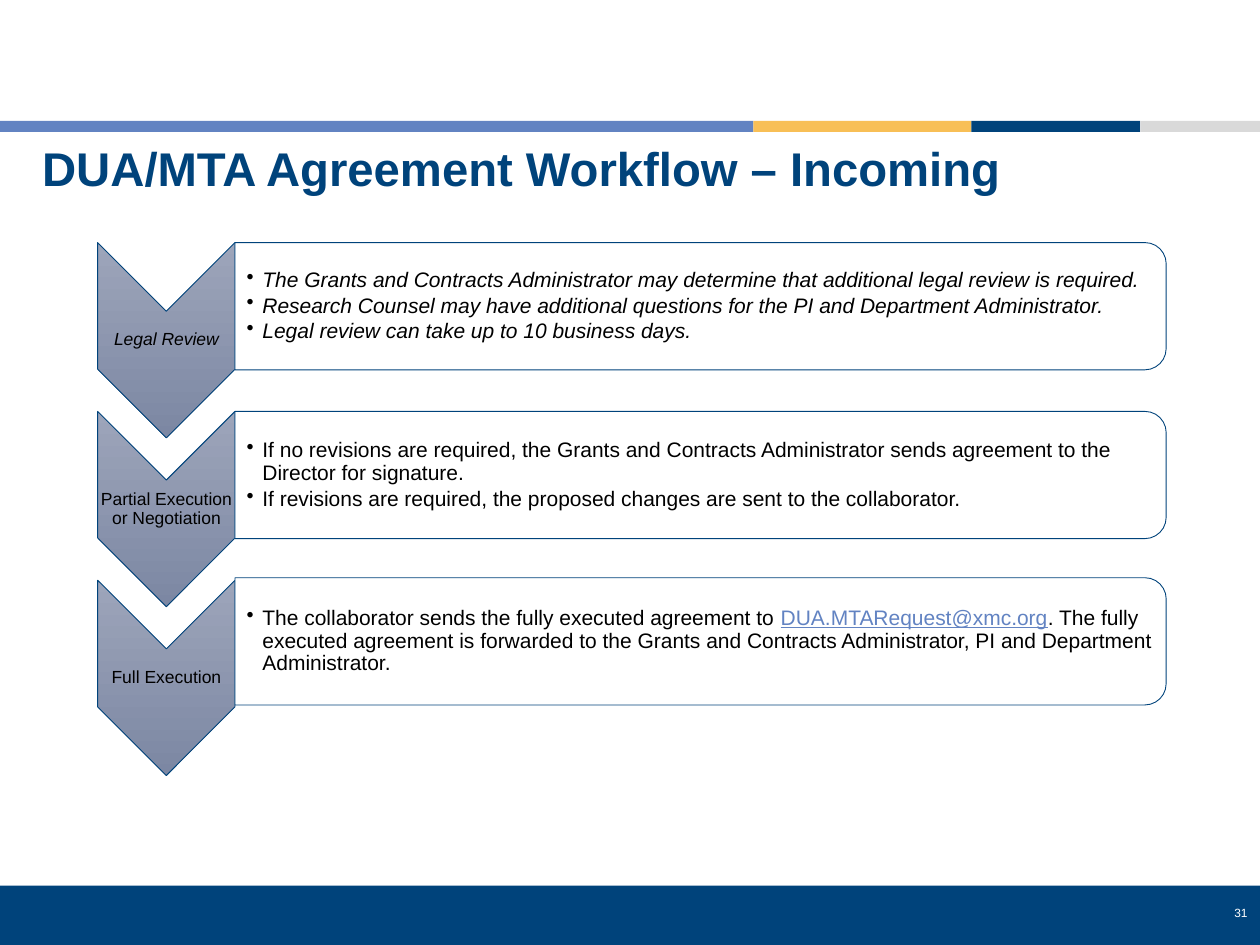
from lxml.etree import SubElement
from pptx import Presentation
from pptx.dml.color import RGBColor
from pptx.enum.shapes import MSO_SHAPE as Preset
from pptx.enum.text import MSO_ANCHOR as Anchor, PP_ALIGN as Align
from pptx.oxml.ns import qn
from pptx.util import Inches, Pt

CELL = 0.1
COLUMNS, ROWS = 100, 75
FONT = "Arial"
COLORS = {
    "navy": "00437B", "blue": "6283C2", "gold": "F8BF56", "grey": "D9D9D9",
    "white": "FFFFFF", "black": "000000", "steel_light": "9DA5BA", "steel_dark": "7C87A3",
}
BANDS = [("blue", 0, 59.8), ("gold", 59.8, 77.1), ("navy", 77.1, 90.5), ("grey", 90.5, COLUMNS)]
STEP_PITCH = 13.4
STEPS = [
    {"label": "Legal Review", "italic": True, "lift": 0, "points": [
        ["The Grants and Contracts Administrator may determine that additional legal review is required."],
        ["Research Counsel may have additional questions for the PI and Department Administrator."],
        ["Legal review can take up to 10 business days."]]},
    {"label": "Partial Execution or Negotiation", "italic": False, "lift": 0, "points": [
        ["If no revisions are required, the Grants and Contracts Administrator sends agreement to the "
         "Director for signature."],
        ["If revisions are required, the proposed changes are sent to the collaborator."]]},
    {"label": "Full Execution", "italic": False, "lift": 0.2, "points": [
        ["The collaborator sends the fully executed agreement to ",
         "DUA.MTARequest@xmc.org",
         ". The fully executed agreement is forwarded to the Grants and Contracts Administrator, "
         "PI and Department Administrator."]]},
]


def color(name):
    """Return the named palette colour."""
    return RGBColor.from_string(COLORS[name])


def grid(cells):
    """Convert grid cells to a slide length."""
    return Inches(cells * CELL)


def add_block(slide, preset, box, fill=None, line=None, turned=False):
    """Add a shape that covers the box, turned a quarter clockwise if asked."""
    left, top, width, height = box
    if turned:
        left, top = left + (width - height) / 2, top + (height - width) / 2
        width, height = height, width
    shape = slide.shapes.add_shape(preset, *map(grid, (left, top, width, height)))
    shape.shadow.inherit = False
    shape.rotation = 90 if turned else 0
    if fill:
        shape.fill.solid()
        shape.fill.fore_color.rgb = color(fill)
    if line:
        shape.line.color.rgb = color(line)
        shape.line.width = Pt(0.5)
    else:
        shape.line.fill.background()
    return shape


def add_text(slide, box, margins, anchor):
    """Add an empty wrapping text box and return its text frame."""
    frame = slide.shapes.add_textbox(*map(grid, box)).text_frame
    frame.word_wrap = True
    frame.vertical_anchor = anchor
    (frame.margin_left, frame.margin_top,
     frame.margin_right, frame.margin_bottom) = map(grid, margins)
    return frame


def format_run(run, size, tint, bold=False, italic=False):
    """Set the font of one run."""
    run.font.name, run.font.size = FONT, Pt(size)
    run.font.bold, run.font.italic = bold, italic
    run.font.color.rgb = color(tint)


def add_line(slide, box, text, margins, anchor, align, size, tint, bold=False, italic=False):
    """Add a text box holding a single formatted paragraph."""
    frame = add_text(slide, box, margins, anchor)
    frame.text = text
    paragraph = frame.paragraphs[0]
    paragraph.alignment, paragraph.line_spacing = align, 0.9
    format_run(paragraph.runs[0], size, tint, bold, italic)
    return paragraph


def add_bullet(paragraph):
    """Give the paragraph a hanging round bullet."""
    properties = paragraph._p.get_or_add_pPr()
    properties.set("marL", str(grid(1.25)))
    properties.set("indent", str(-grid(1.25)))
    SubElement(properties, qn("a:buChar")).set("char", "•")


def add_frame(slide, box):
    """Add the colour bands, the footer and the page number."""
    left, top, width, height = box
    for name, start, end in BANDS:
        add_block(slide, Preset.RECTANGLE, (left + start, top + 9.6, end - start, 0.87), name)
    add_block(slide, Preset.RECTANGLE, (left, top + height - 4.7, width, 4.7), "navy")
    add_line(slide, (left + width - 6.9, top + height - 3.5, 6.9, 2.1), "31",
             (1, 0.5, 1, 0.5), Anchor.TOP, Align.RIGHT, 6.8, "white")


def add_chevron(slide, box, step):
    """Add a downward chevron with its label."""
    left, top, width, height = box
    chevron = add_block(slide, Preset.CHEVRON, box, line="navy", turned=True)
    chevron.fill.gradient()
    chevron.fill.gradient_angle = 0
    for stop, name in zip(chevron.fill.gradient_stops, ("steel_light", "steel_dark")):
        stop.color.rgb = color(name)
    paragraph = add_line(slide, (left, top + width / 2, width, height - width), step["label"],
                         (0.1,) * 4, Anchor.MIDDLE, Align.CENTER, 10, "black",
                         italic=step["italic"])
    paragraph.space_after = Pt(3.5)


def add_card(slide, box, step):
    """Add a card rounded on its right side, with the bullet points of a step."""
    left, top, width, height = box
    add_block(slide, Preset.ROUND_2_SAME_RECTANGLE, box, "white", "navy", turned=True)
    frame = add_text(slide, (left, top + 0.5, width - 0.5, height - 1),
                     (0.93, 0.1, 0.1, 0.1), Anchor.MIDDLE)
    for index, parts in enumerate(step["points"]):
        paragraph = frame.add_paragraph() if index else frame.paragraphs[0]
        paragraph.line_spacing, paragraph.space_after = 0.9, Pt(1.8)
        add_bullet(paragraph)
        for part in parts:
            run = paragraph.add_run()
            run.text = part
            is_address = "@" in part
            format_run(run, 12, "blue" if is_address else "black", italic=step["italic"])
            run.font.underline = is_address


def add_workflow(slide, box):
    """Stack the steps at an equal pitch within the box."""
    left, top, width, height = box
    chevron_width, chevron_height, card_height = 10.9, 15.5, 10.1
    for index, step in enumerate(STEPS):
        step_top = top + index * STEP_PITCH
        add_chevron(slide, (left, step_top, chevron_width, chevron_height), step)
        add_card(slide, (left + chevron_width, step_top - step["lift"],
                         width - chevron_width, card_height), step)


def main():
    """Build and save the workflow slide."""
    presentation = Presentation()
    presentation.slide_width, presentation.slide_height = grid(COLUMNS), grid(ROWS)
    slide = presentation.slides.add_slide(presentation.slide_layouts[6])
    add_frame(slide, (0, 0, COLUMNS, ROWS))
    add_workflow(slide, (7.75, 19.25, 84.8, 42.3))
    add_line(slide, (2.6, 11.2, 95.7, 4.8), "DUA/MTA Agreement Workflow – Incoming",
             (0.75, 0.4, 0.75, 0.4), Anchor.BOTTOM, Align.LEFT, 27, "navy", bold=True)
    presentation.save("out.pptx")


if __name__ == "__main__":
    main()
